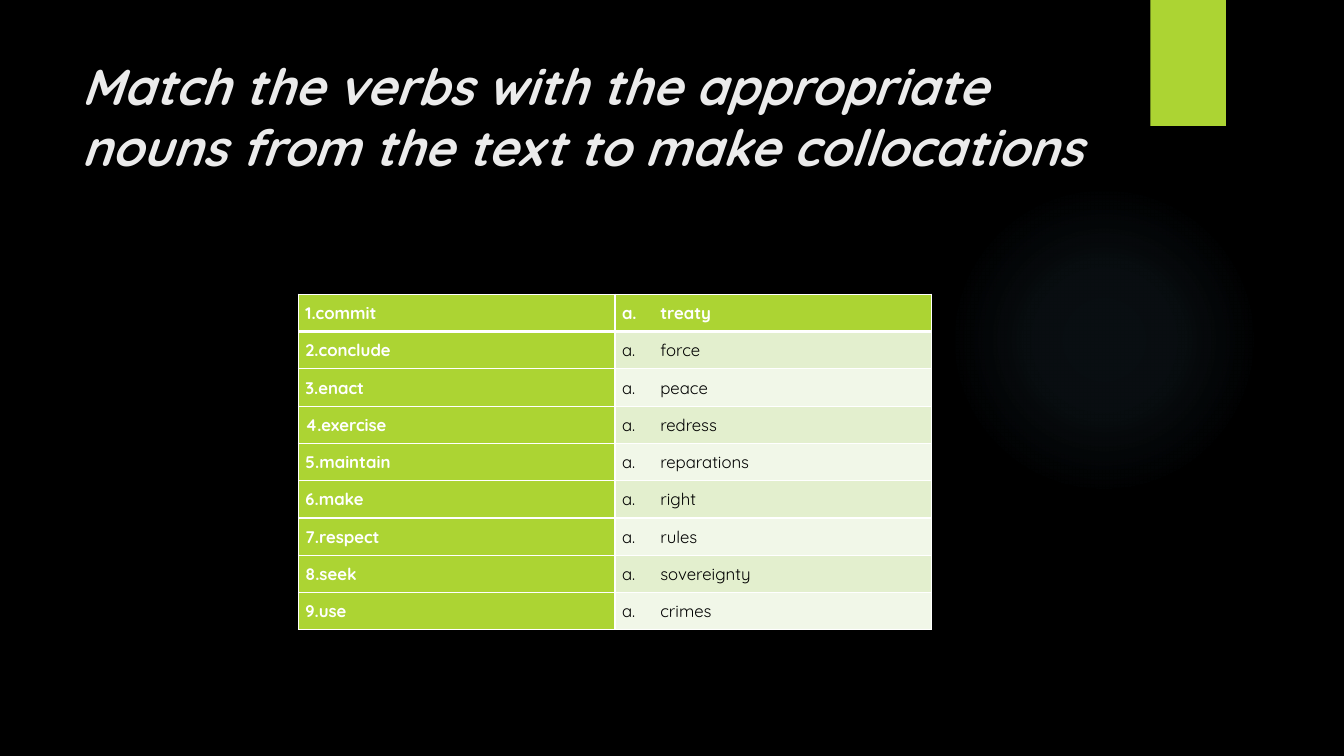
from lxml.etree import SubElement
from pptx import Presentation
from pptx.dml.color import RGBColor
from pptx.enum.shapes import MSO_SHAPE
from pptx.enum.text import MSO_ANCHOR, PP_ALIGN
from pptx.oxml import parse_xml
from pptx.oxml.ns import nsdecls, qn
from pptx.util import Inches, Pt

FONT = "Quicksand"
LIME = "ACD433"
WHITE = "FFFFFF"
BANDS = ("F1F7E8", "E3EFCE")
TITLE = "Match the verbs with the appropriate nouns from the text to make collocations"
VERBS = ("commit", "conclude", "enact", "exercise", "maintain", "make", "respect", "seek", "use")
NOUNS = ("treaty", "force", "peace", "redress", "reparations", "right", "rules", "sovereignty", "crimes")
GLOW_STOPS = ((0, 7), (36, 6), (69, 0))


def paint(fill, color):
    """Give a fill one solid colour."""
    fill.solid()
    fill.fore_color.rgb = RGBColor.from_string(color)


def style_font(font, size, color, bold, italic=False):
    """Set the typeface, size, colour and weight of a font."""
    font.name = FONT
    font.size = Pt(size)
    font.bold = bold
    font.italic = italic
    font.color.rgb = RGBColor.from_string(color)


def add_plain_shape(slide, kind, left, top, width, height, color):
    """Add a preset shape without outline or shadow."""
    shape = slide.shapes.add_shape(kind, Inches(left), Inches(top), Inches(width), Inches(height))
    shape.shadow.inherit = False
    shape.line.fill.background()
    paint(shape.fill, color)
    return shape


def add_glow(slide):
    """Add the faint round glow that fades outwards."""
    glow = add_plain_shape(slide, MSO_SHAPE.OVAL, 9.41, 1.83, 3.08, 3.08, "7AC4F0")
    stops = "".join(
        f'<a:gs pos="{position * 1000}"><a:srgbClr val="7AC4F0">'
        f'<a:alpha val="{opacity * 1000}"/></a:srgbClr></a:gs>'
        for position, opacity in GLOW_STOPS
    )
    gradient = parse_xml(
        f'<a:gradFill {nsdecls("a")} rotWithShape="1"><a:gsLst>{stops}</a:gsLst><a:path path="circle">'
        '<a:fillToRect l="50000" t="50000" r="50000" b="50000"/></a:path></a:gradFill>'
    )
    properties = glow.element.spPr
    properties.replace(properties.find(qn("a:solidFill")), gradient)


def add_title(slide):
    """Add the slide heading."""
    heading = slide.shapes.add_textbox(Inches(0.71), Inches(0.5), Inches(10.29), Inches(1.53))
    frame = heading.text_frame
    frame.word_wrap = True
    frame.vertical_anchor = MSO_ANCHOR.TOP
    frame.text = TITLE
    style_font(frame.paragraphs[0].runs[0].font, 36, "EBEBEB", True, True)


def set_borders(cell, top, bottom):
    """Draw white cell borders, with the top and bottom widths in points."""
    properties = cell._tc.get_or_add_tcPr()
    for side, width in (("L", 1), ("R", 1), ("T", top), ("B", bottom)):
        border = SubElement(properties, qn(f"a:ln{side}"), w=str(Pt(width)))
        solid = SubElement(border, qn("a:solidFill"))
        SubElement(solid, qn("a:srgbClr"), val=WHITE)


def fill_cell(cell, text, row, indent, background, color, bold, lettered):
    """Write one table cell and style it."""
    set_borders(cell, 3 if row == 1 else 1, 3 if row == 0 else 1)
    paint(cell.fill, background)
    cell.margin_left = cell.margin_right = cell.margin_top = cell.margin_bottom = Inches(0.07)
    cell.text_frame.text = text
    paragraph = cell.text_frame.paragraphs[0]
    paragraph.alignment = PP_ALIGN.JUSTIFY
    paragraph.line_spacing = 1.07
    paragraph.space_after = Pt(8)
    properties = paragraph._p.get_or_add_pPr()
    properties.set("marL", str(Inches(indent)))
    properties.set("indent", str(-Inches(indent)))
    if lettered:
        SubElement(properties, qn("a:buAutoNum"), type="alphaLcPeriod")
    style_font(paragraph.runs[0].font, 12, color, bold)


def add_matching_table(slide):
    """Add the table of numbered verbs and lettered nouns."""
    table = slide.shapes.add_table(
        len(VERBS), 2, Inches(2.96), Inches(2.92), Inches(6.28), Inches(3.33)
    ).table
    for row, (verb, noun) in enumerate(zip(VERBS, NOUNS)):
        header = row == 0
        noun_fill = LIME if header else BANDS[row % 2]
        noun_color = WHITE if header else "000000"
        fill_cell(table.cell(row, 0), f"{row + 1}.{verb}", row, 0.2, LIME, WHITE, True, False)
        fill_cell(table.cell(row, 1), noun, row, 0.38, noun_fill, noun_color, header, True)


def main():
    """Build and save the slide."""
    presentation = Presentation()
    presentation.slide_width = Inches(13.33)
    presentation.slide_height = Inches(7.5)
    slide = presentation.slides.add_slide(presentation.slide_layouts[6])
    paint(slide.background.fill, "000000")
    add_glow(slide)
    add_plain_shape(slide, MSO_SHAPE.RECTANGLE, 11.41, 0, 0.75, 1.25, LIME)
    add_title(slide)
    add_matching_table(slide)
    presentation.save("out.pptx")


if __name__ == "__main__":
    main()
